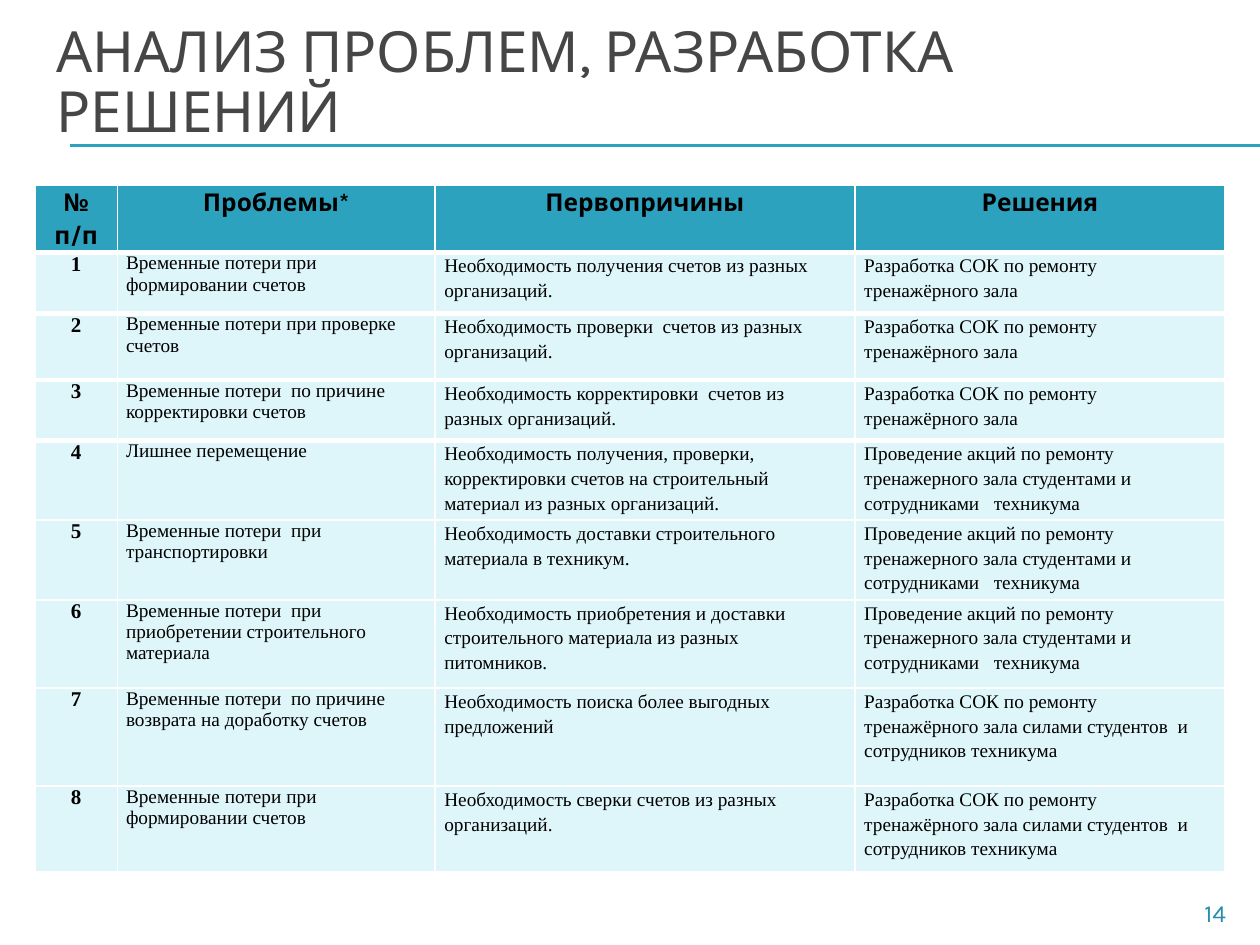
import pptx
import pptx.dml.color
import pptx.enum.shapes
import pptx.enum.text
import pptx.oxml.ns
import pptx.util
from lxml import etree

Pt = pptx.util.Pt
ALIGN = pptx.enum.text.PP_ALIGN
ANCHOR = pptx.enum.text.MSO_ANCHOR

COLORS = {
    "title": "464646",
    "accent": "2DA2BF",
    "body": "DEF5FA",
    "text": "000000",
    "border": "FFFFFF",
    "number": "268EA8",
}
HEAD_FONT = "Karla"
BODY_FONT = "Times New Roman"

REPAIR = "Разработка СОК по ремонту тренажёрного зала"
CAMPAIGN = ("Проведение акций по ремонту тренажерного зала студентами и "
            "сотрудниками   техникума")
JOINT_REPAIR = REPAIR + " силами студентов  и сотрудников техникума"

HEADERS = ["№ п/п", "Проблемы*", "Первопричины", "Решения"]
PROBLEMS = [
    ("Временные потери при формировании счетов",
     "Необходимость получения счетов из разных организаций.", REPAIR),
    ("Временные потери при проверке счетов",
     "Необходимость проверки  счетов из разных организаций.", REPAIR),
    ("Временные потери  по причине корректировки счетов",
     "Необходимость корректировки  счетов из разных организаций.", REPAIR),
    ("Лишнее перемещение",
     "Необходимость получения, проверки,  корректировки счетов на "
     "строительный материал из разных организаций.", CAMPAIGN),
    ("Временные потери  при транспортировки",
     "Необходимость доставки строительного материала в техникум.", CAMPAIGN),
    ("Временные потери  при приобретении строительного материала",
     "Необходимость приобретения и доставки строительного материала из "
     "разных питомников.", CAMPAIGN),
    ("Временные потери  по причине возврата на доработку счетов",
     "Необходимость поиска более выгодных предложений", JOINT_REPAIR),
    ("Временные потери при формировании счетов",
     "Необходимость сверки счетов из разных организаций.", JOINT_REPAIR),
]
COLUMN_WIDTHS = [47, 181.5, 240, 211.5]
ROW_HEIGHTS = [37.5, 35, 38, 34.5, 43, 42, 50.5, 56, 49]
THICK_EDGES = range(1, 5)  # horizontal rules below the header and rows 1-3


class SlideBuilder:
    """Holds the style and the current slide."""

    def __init__(self, slide, colors):
        self.slide = slide
        self.colors = colors

    def color(self, name):
        return pptx.dml.color.RGBColor.from_string(self.colors[name])

    def add_words(self, frame, text, size, font, color, bold=False,
                  align=ALIGN.LEFT, spacing=1.0):
        para = frame.paragraphs[0]
        para.alignment = align
        para.line_spacing = spacing
        span = para.add_run()
        span.text = text
        span.font.size = Pt(size)
        span.font.name = font
        span.font.bold = bold
        span.font.color.rgb = self.color(color)

    def text(self, left, top, width, height, text, anchor=ANCHOR.TOP, **style):
        box = self.slide.shapes.add_textbox(
            Pt(left), Pt(top), Pt(width), Pt(height))
        box.text_frame.word_wrap = True
        box.text_frame.vertical_anchor = anchor
        self.add_words(box.text_frame, text, **style)

    def line(self, left, top, right, color, width):
        rule = self.slide.shapes.add_connector(
            pptx.enum.shapes.MSO_CONNECTOR.STRAIGHT,
            Pt(left), Pt(top), Pt(right), Pt(top))
        rule.line.color.rgb = self.color(color)
        rule.line.width = Pt(width)
        etree.SubElement(rule._element.spPr, pptx.oxml.ns.qn("a:effectLst"))

    def table(self, left, top, widths, heights):
        table = self.slide.shapes.add_table(
            len(heights), len(widths), Pt(left), Pt(top),
            Pt(sum(widths)), Pt(sum(heights))).table
        table.horz_banding = False
        for column, width in zip(table.columns, widths):
            column.width = Pt(width)
        for row, height in zip(table.rows, heights):
            row.height = Pt(height)
        return table

    def cell(self, cell, text, fill, top_rule, bottom_rule, inset, **style):
        cell.margin_left = cell.margin_right = Pt(inset)
        cell.margin_top = cell.margin_bottom = Pt(0)
        qn = pptx.oxml.ns.qn
        properties = cell._tc.get_or_add_tcPr()
        for side, width in (("L", 1), ("R", 1),
                            ("T", top_rule), ("B", bottom_rule)):
            border = etree.SubElement(
                properties, qn("a:ln" + side), w=str(int(Pt(width))))
            solid = etree.SubElement(border, qn("a:solidFill"))
            etree.SubElement(solid, qn("a:srgbClr"), val=self.colors["border"])
        cell.fill.solid()
        cell.fill.fore_color.rgb = self.color(fill)
        self.add_words(cell.text_frame, text, color="text", **style)


def main():
    deck = pptx.Presentation()
    deck.slide_width = Pt(720)
    deck.slide_height = Pt(540)
    page = SlideBuilder(deck.slides.add_slide(deck.slide_layouts[6]), COLORS)

    # Double rule under the title
    for top in (82.8, 83.5):
        page.line(40.3, top, 720, "accent", 0.75)

    # Title
    page.text(25.2, 15.1, 684, 66.2, "АНАЛИЗ ПРОБЛЕМ, РАЗРАБОТКА РЕШЕНИЙ",
              anchor=ANCHOR.MIDDLE, size=32.4, font=HEAD_FONT, color="title",
              spacing=0.88)

    # Table of problems, root causes and solutions
    header_style = dict(size=14, font=HEAD_FONT, bold=True,
                        align=ALIGN.CENTER, spacing=1.15, inset=5.4)
    number_style = dict(size=12, font=BODY_FONT, bold=True,
                        align=ALIGN.CENTER, inset=5.4)
    problem_style = dict(size=11, font=BODY_FONT, inset=5)
    detail_style = dict(size=11, font=BODY_FONT, spacing=1.15, inset=5.4)
    body_styles = [number_style, problem_style, detail_style, detail_style]

    table = page.table(20, 105.6, COLUMN_WIDTHS, ROW_HEIGHTS)
    rows = [HEADERS] + [(str(number), *problem)
                        for number, problem in enumerate(PROBLEMS, 1)]
    for r, row in enumerate(rows):
        top_rule, bottom_rule = (
            3 if edge in THICK_EDGES else 1 for edge in (r, r + 1))
        styles = body_styles if r else [header_style] * len(HEADERS)
        for c, (text, style) in enumerate(zip(row, styles)):
            page.cell(table.cell(r, c), text, "body" if r else "accent",
                      top_rule, bottom_rule, **style)

    # Page number
    page.text(36.7, 509.8, 671, 19.4, "14", size=14, font=HEAD_FONT,
              color="number", align=ALIGN.RIGHT)

    deck.save("out.pptx")


if __name__ == "__main__":
    main()
